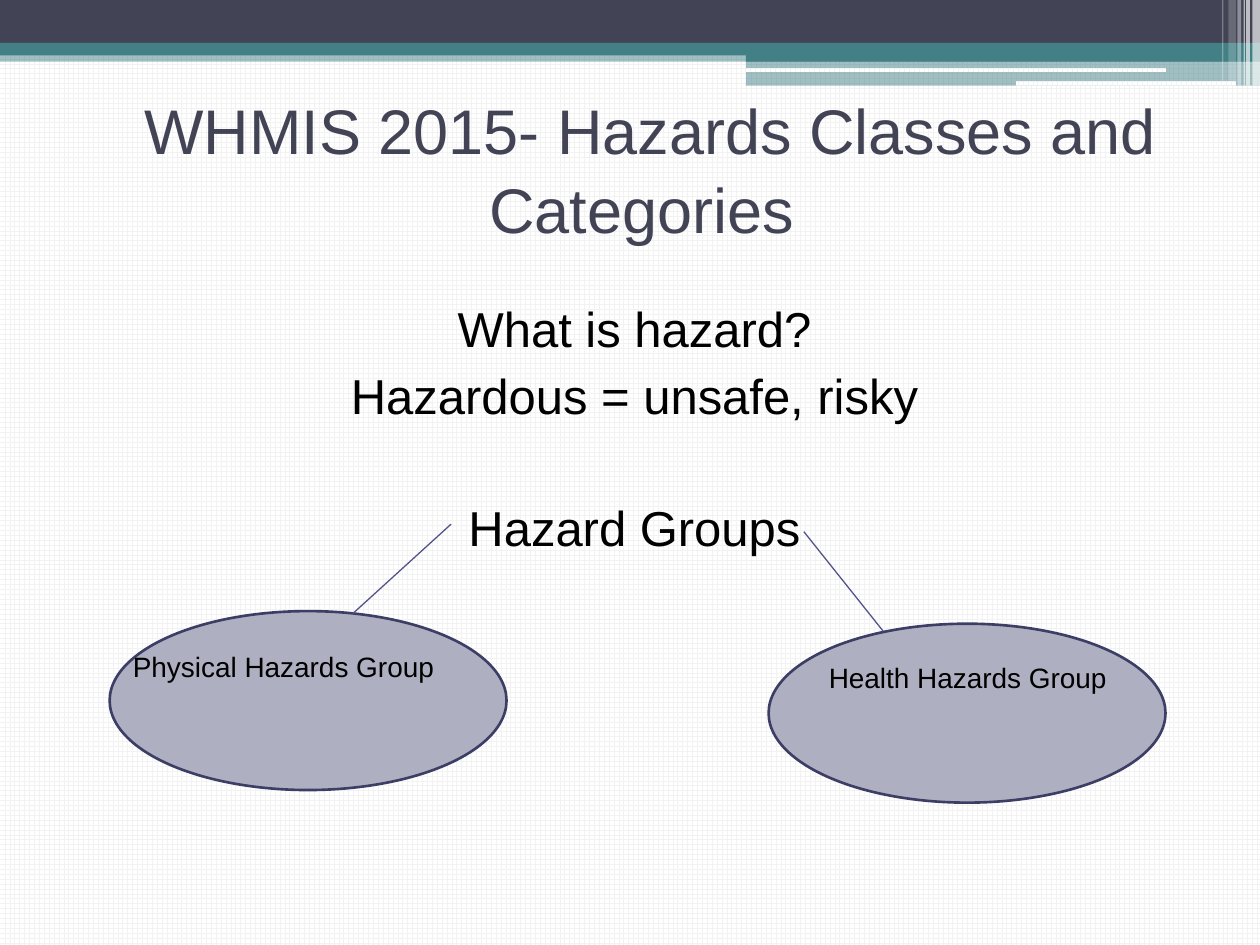
import pptx
import pptx.util
import pptx.dml.color
import pptx.enum.dml
import pptx.enum.shapes
import pptx.enum.text
import pptx.oxml.ns
from lxml import etree

# Content
TITLE = "WHMIS 2015- Hazards Classes and Categories "
BODY = [  # text, space before in points
    ("What is hazard?", 3),
    ("Hazardous = unsafe, risky", 3),
    ("Hazard Groups", 39.6),
]
GROUPS = [  # label, label corner, ellipse corner, line start, line end
    ("Physical Hazards Group", (9.1, 51.1), (8.7, 48.5), (35.8, 41.6), (28, 48.7)),
    ("Health Hazards Group", (63.4, 51.9), (61, 49.5), (63.8, 42.2), (70.1, 50.1)),
]

# Look
COLORS = {
    "navy": "424456", "teal": "438086", "white": "FFFFFF", "grid": "F2F2F2",
    "black": "000000", "oval": "AEB0C1", "edge": "3D3E66", "link": "53548A",
}
FONT = "Arial"
COLS, ROWS = 100, 75
BANDS = [  # left, top, width, height, colour, opacity in percent
    (0, 4, 100, 0.9, "teal", 50),
    (0, 0, 100, 3.4, "navy", 100),
    (0, 3.4, 100, 1, "teal", 100),
    (59.2, 3.9, 40.8, 1, "teal", 100),
    (59.2, 4.8, 40.8, 2, "teal", 50),
]
SLITS = [(59.1, 5.4, 33.5, 0.3), (80.6, 6.4, 17.5, 0.4)]
STRIPES = [  # left, width, height, opacity in percent
    (99.4, 0.6, 6.8, 65), (98.9, 0.3, 6.8, 65), (98.7, 0.1, 6.8, 60),
    (98.2, 0.3, 6.8, 40), (97.5, 0.6, 6.4, 20), (97, 0.1, 6.4, 30),
]

SHAPE = pptx.enum.shapes.MSO_SHAPE
ANCHOR = pptx.enum.text.MSO_ANCHOR

prs = pptx.Presentation()
prs.slide_width = pptx.util.Inches(10)
prs.slide_height = pptx.util.Inches(7.5)
s = prs.slides.add_slide(prs.slide_layouts[6])


def grid(*cells):
    """Turn alternating columns and rows into lengths."""
    units = (prs.slide_width / COLS, prs.slide_height / ROWS)
    return [round(c * units[i % 2]) for i, c in enumerate(cells)]


def rgb(name):
    return pptx.dml.color.RGBColor.from_string(COLORS[name])


def fill_grid(fill):
    fill.patterned()
    fill.pattern = pptx.enum.dml.MSO_PATTERN.LARGE_GRID
    fill.fore_color.rgb = rgb("grid")
    fill.back_color.rgb = rgb("white")


def add_shape(kind, box, color=None, opacity=100):
    sp = s.shapes.add_shape(kind, *grid(*box))
    sp.shadow.inherit = False
    sp.line.fill.background()
    if color is None:
        fill_grid(sp.fill)
        return sp
    sp.fill.solid()
    sp.fill.fore_color.rgb = rgb(color)
    if opacity < 100:
        clr = sp.fill._xPr.find(".//" + pptx.oxml.ns.qn("a:srgbClr"))
        etree.SubElement(clr, pptx.oxml.ns.qn("a:alpha"), val=str(opacity * 1000))
    return sp


def add_text(box, lines, size, color="black", anchor=ANCHOR.TOP, spacing=None):
    tf = s.shapes.add_textbox(*grid(*box)).text_frame
    tf.word_wrap = True
    tf.vertical_anchor = anchor
    for i, (text, before) in enumerate(lines):
        p = tf.add_paragraph() if i else tf.paragraphs[0]
        p.alignment = pptx.enum.text.PP_ALIGN.CENTER
        p.space_before = pptx.util.Pt(before)
        p.line_spacing = spacing
        r = p.add_run()
        r.text = text
        r.font.name = FONT
        r.font.size = pptx.util.Pt(size)
        r.font.color.rgb = rgb(color)


# Background and header decoration
fill_grid(s.background.fill)
for *box, color, opacity in BANDS:
    add_shape(SHAPE.RECTANGLE, box, color, opacity)
for box in SLITS:
    add_shape(SHAPE.ROUNDED_RECTANGLE, box)
for left, width, height, opacity in STRIPES:
    add_shape(SHAPE.RECTANGLE, (left, 0, width, height), "white", opacity)

# Title and body
add_text((6.7, 7.3, 89.8, 11.9), [(TITLE, 0)], 36, "navy", ANCHOR.MIDDLE, 1.05)
add_text((5, 23, 90.7, 49.5), BODY, 28, spacing=1.05)

# Hazard groups: ellipses, labels, lines
for label, label_at, oval_at, start, end in GROUPS:
    sp = add_shape(SHAPE.OVAL, (*oval_at, 31.5, 14.2), "oval")
    sp.line.color.rgb = rgb("edge")
    sp.line.width = pptx.util.Pt(1.5)
    add_text((*label_at, 26.8, 3.7), [(label, 0)], 16)
    link = s.shapes.add_connector(
        pptx.enum.shapes.MSO_CONNECTOR.STRAIGHT, *grid(*start, *end))
    link.line.color.rgb = rgb("link")
    link.line.width = pptx.util.Pt(0.75)
    etree.SubElement(link._element.spPr, pptx.oxml.ns.qn("a:effectLst"))

prs.save("out.pptx")
